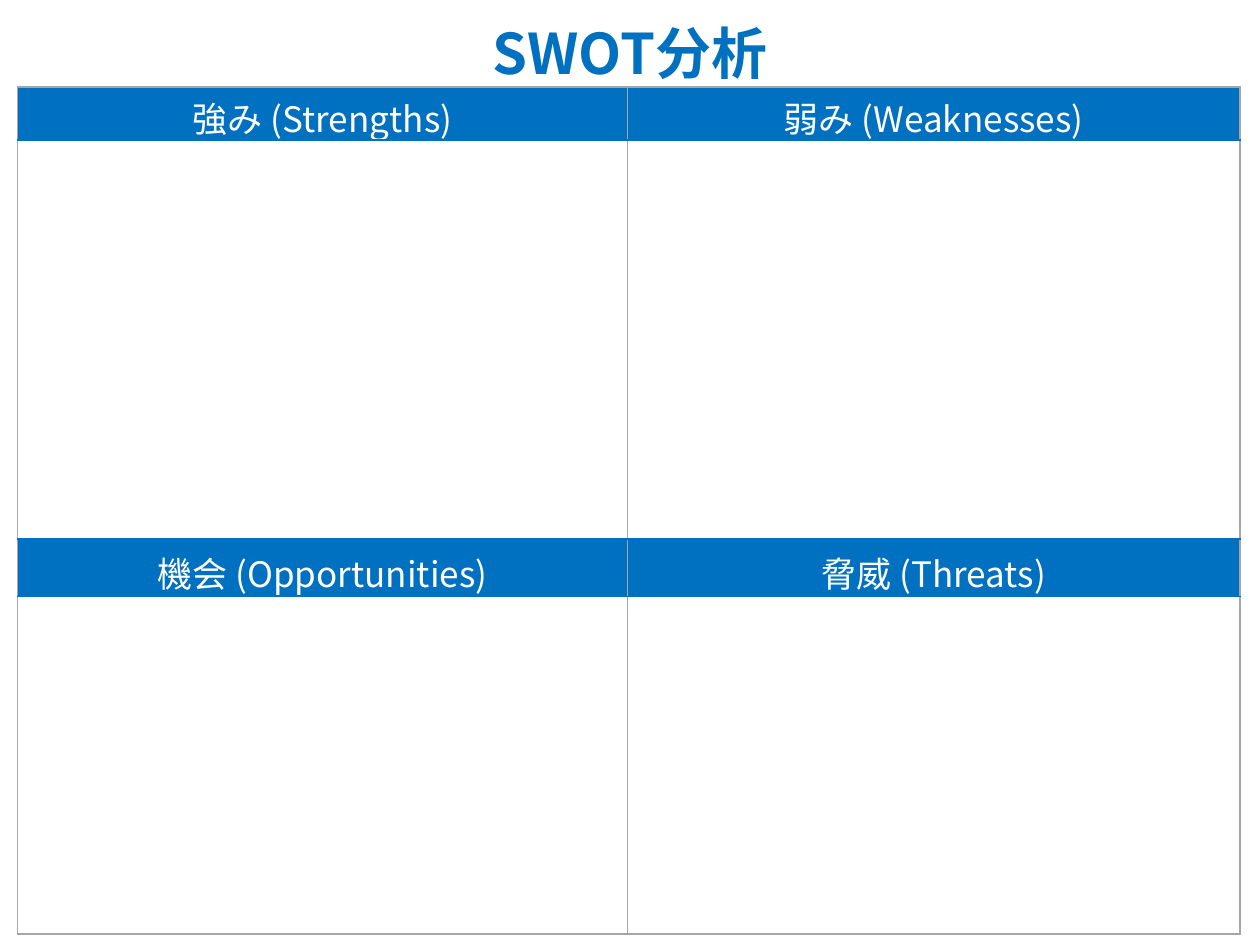
from lxml import etree
from pptx import Presentation
from pptx.dml.color import RGBColor
from pptx.enum import text
from pptx.oxml import ns
from pptx.util import Inches, Pt

FONT = "Noto Sans CJK JP"
BLUE = RGBColor(0x00, 0x70, 0xC0)
GREY = RGBColor(0xA6, 0xA6, 0xA6)
WHITE = RGBColor(0xFF, 0xFF, 0xFF)


def write_centred(frame, wording, size, color, bold):
    frame.text = wording
    paragraph = frame.paragraphs[0]
    paragraph.alignment = text.PP_ALIGN.CENTER
    font = paragraph.font
    font.name, font.size, font.bold = FONT, Pt(size), bold
    font.color.rgb = color
    properties = paragraph._p.pPr.find(ns.qn("a:defRPr"))
    etree.SubElement(properties, ns.qn("a:ea"), typeface=FONT)


def add_border(cell, side, color):
    properties = cell._tc.get_or_add_tcPr()
    line = etree.SubElement(properties, ns.qn(f"a:ln{side}"), w=str(Pt(1)))
    fill = etree.SubElement(line, ns.qn("a:solidFill"))
    etree.SubElement(fill, ns.qn("a:srgbClr"), val=str(color))


presentation = Presentation()
presentation.slide_width = Inches(10)
presentation.slide_height = Inches(7.5)
slide = presentation.slides.add_slide(presentation.slide_layouts[5])

title = slide.shapes.title
title.left, title.top = Inches(0), Inches(0.1)
title.width, title.height = Inches(10), Inches(0.64)
title.text_frame.auto_size = text.MSO_AUTO_SIZE.SHAPE_TO_FIT_TEXT
title.text_frame.vertical_anchor = text.MSO_ANCHOR.TOP
write_centred(title.text_frame, "SWOT分析", 32, BLUE, True)

column_widths = [4.84, 4.86]
row_heights = [0.42, 3.17, 0.45, 2.68]
headings = {
    0: ["強み (Strengths)", "弱み (Weaknesses)"],
    2: ["機会 (Opportunities)", "脅威 (Threats)"],
}
heading_margins = {0: 0.04, 2: 0.06}
heading_anchors = {0: text.MSO_ANCHOR.TOP, 2: text.MSO_ANCHOR.MIDDLE}

table = slide.shapes.add_table(
    len(row_heights), len(column_widths),
    Inches(0.14), Inches(0.69), Inches(9.7), Inches(6.71),
).table
table.first_row = False
table.horz_banding = False
for column, width in zip(table.columns, column_widths):
    column.width = Inches(width)

last_row = len(row_heights) - 1
for row_index, height in enumerate(row_heights):
    table.rows[row_index].height = Inches(height)
    for column_index in range(len(column_widths)):
        cell = table.cell(row_index, column_index)
        add_border(cell, "L", GREY)
        add_border(cell, "R", GREY)
        add_border(cell, "T", GREY if row_index == 0 else BLUE)
        add_border(cell, "B", GREY if row_index == last_row else BLUE)
        if row_index not in headings:
            cell.fill.background()
            continue
        cell.fill.solid()
        cell.fill.fore_color.rgb = BLUE
        margin = Inches(heading_margins[row_index])
        cell.margin_left = cell.margin_right = margin
        cell.margin_top = cell.margin_bottom = margin
        cell.vertical_anchor = heading_anchors[row_index]
        write_centred(cell.text_frame, headings[row_index][column_index], 20, WHITE, False)

presentation.save("out.pptx")
